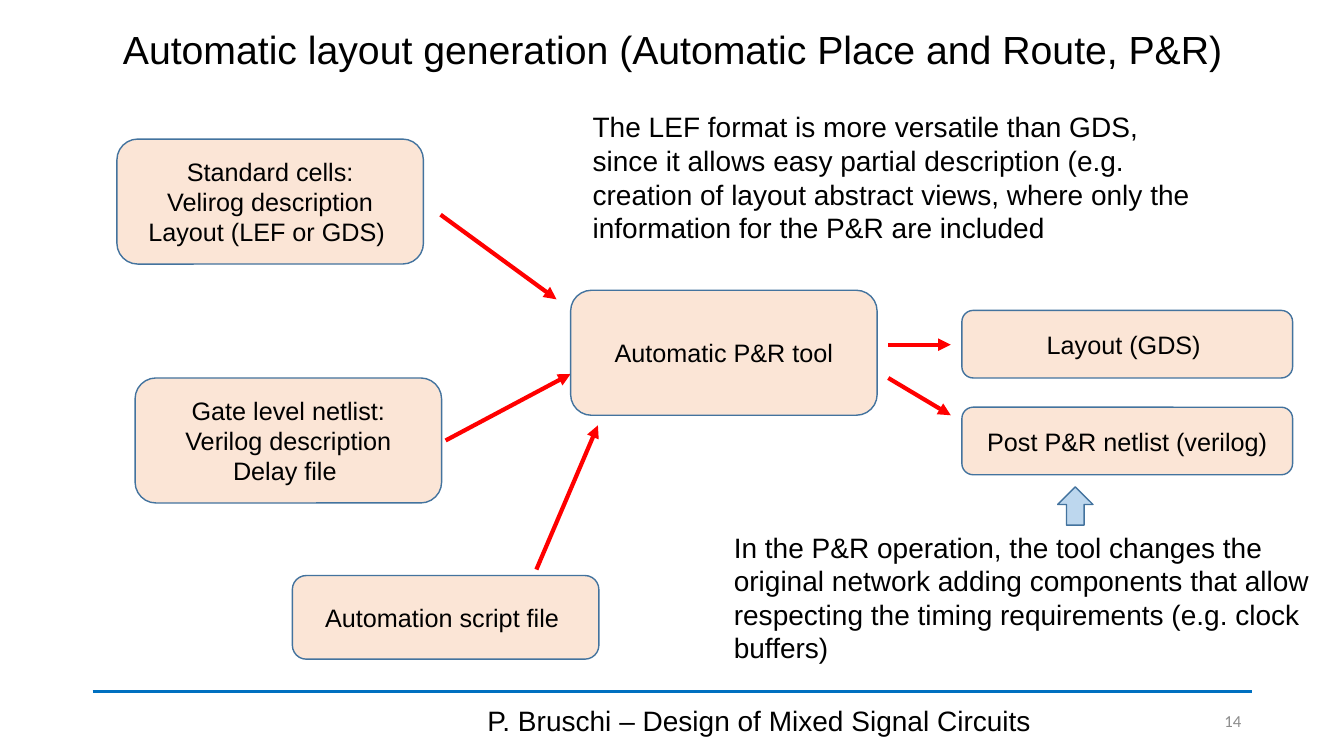
"""Build the slide on automatic place and route."""
from dataclasses import dataclass

from lxml import etree
from pptx import Presentation
from pptx import util as u
from pptx.dml import color
from pptx.enum import shapes, text
from pptx.oxml import ns

BLACK, PEACH, STEEL, SKY = "000000", "FBE5D6", "43739E", "BDD7EE"
RED, BLUE, GREY = "FF0000", "0070C0", "8C8C8C"
LEFT, CENTER, RIGHT = text.PP_ALIGN.LEFT, text.PP_ALIGN.CENTER, text.PP_ALIGN.RIGHT
TOP, MIDDLE = text.MSO_ANCHOR.TOP, text.MSO_ANCHOR.MIDDLE
BOX_WIDTH, TALL = 3.04, 1.24
OUTPUT_LEFT, OUTPUT_WIDTH, OUTPUT_HEIGHT = 9.54, 3.28, 0.67
NOTE_WIDTH, NOTE_HEIGHT = 6.16, 1.45


@dataclass
class Block:
    left: float
    top: float
    width: float
    height: float
    lines: tuple[str, ...] = ()
    fill: str = PEACH
    kind: int = shapes.MSO_SHAPE.ROUNDED_RECTANGLE


@dataclass
class Label:
    left: float
    top: float
    width: float
    height: float
    words: str
    size: int = 20
    align: int = LEFT
    anchor: int = MIDDLE
    font: str = "Arial"
    ink: str = BLACK
    spacing: float = 1.0


@dataclass
class Line:
    start: tuple[float, float]
    end: tuple[float, float]
    ink: str = RED
    weight: float = 3
    arrow: bool = True


BLOCKS = [
    Block(1.16, 1.38, BOX_WIDTH, TALL,
          ("Standard cells:", "Velirog description", "Layout (LEF or GDS) ")),
    Block(1.34, 3.75, BOX_WIDTH, TALL,
          ("Gate level netlist:", "Verilog description", "Delay file ")),
    Block(5.66, 2.88, BOX_WIDTH, TALL, ("Automatic P&R tool",)),
    Block(2.9, 5.71, BOX_WIDTH, 0.83, ("Automation script file ",)),
    Block(OUTPUT_LEFT, 3.08, OUTPUT_WIDTH, OUTPUT_HEIGHT, ("Layout (GDS) ",)),
    Block(OUTPUT_LEFT, 4.04, OUTPUT_WIDTH, OUTPUT_HEIGHT, ("Post P&R netlist (verilog)",)),
    Block(10.49, 4.83, 0.35, 0.38, fill=SKY, kind=shapes.MSO_SHAPE.UP_ARROW),
]
LABELS = [
    Label(0.92, 0.15, 11.5, 0.72,
          "Automatic layout generation (Automatic Place and Route, P&R)",
          size=28, align=CENTER, spacing=0.9),
    Label(4.42, 6.95, 6.22, 0.4, "P. Bruschi – Design of Mixed Signal Circuits", align=CENTER),
    Label(11.45, 6.95, 0.96, 0.4, "14", size=12, align=RIGHT, font="Calibri", ink=GREY),
    Label(7.18, 5.21, NOTE_WIDTH, NOTE_HEIGHT,
          "In the P&R operation, the tool changes the original network adding components "
          "that allow respecting the timing requirements (e.g. clock buffers)", anchor=TOP),
    Label(5.78, 1.04, NOTE_WIDTH, NOTE_HEIGHT,
          "The LEF format is more versatile than GDS, since it allows easy partial description "
          "(e.g. creation of layout abstract views, where only the information for the P&R "
          "are included", anchor=TOP),
]
LINES = [
    Line((0.92, 6.86), (12.42, 6.86), BLUE, 2.75, arrow=False),
    Line((4.37, 2.13), (5.52, 2.97)),
    Line((4.42, 4.37), (5.66, 3.71)),
    Line((5.32, 5.65), (5.93, 4.22)),
    Line((8.81, 3.42), (9.43, 3.42)),
    Line((8.81, 3.75), (9.43, 4.12)),
]


def apply(target, values: dict) -> None:
    """Set every named attribute on the target."""
    for name, value in values.items():
        setattr(target, name, value)


def paint(fill, ink: str) -> None:
    """Give a fill one solid colour."""
    fill.solid()
    fill.fore_color.rgb = color.RGBColor.from_string(ink)


def write(frame, lines: tuple[str, ...], label: Label) -> None:
    """Write one paragraph per line in the label's format."""
    apply(frame, {"word_wrap": True, "vertical_anchor": label.anchor})
    for index, words in enumerate(lines):
        para = frame.add_paragraph() if index else frame.paragraphs[0]
        apply(para, {"alignment": label.align, "line_spacing": label.spacing})
        span = para.add_run()
        span.text = words
        apply(span.font, {"name": label.font, "size": u.Pt(label.size)})
        paint(span.font.fill, label.ink)


def place(item: Block | Label) -> list[u.Length]:
    """Return left, top, width and height as lengths."""
    return [u.Inches(n) for n in (item.left, item.top, item.width, item.height)]


def draw_block(page, block: Block) -> None:
    """Draw a filled shape with its centred lines."""
    box = page.shapes.add_shape(block.kind, *place(block))
    box.shadow.inherit = False
    paint(box.fill, block.fill)
    paint(box.line.fill, STEEL)
    box.line.width = u.Pt(1)
    write(box.text_frame, block.lines, Label(0, 0, 0, 0, "", size=18, align=CENTER))


def draw_label(page, label: Label) -> None:
    """Draw a free text box."""
    box = page.shapes.add_textbox(*place(label))
    write(box.text_frame, (label.words,), label)


def draw_line(page, line: Line) -> None:
    """Draw a straight line, with an arrowhead if wanted."""
    ends = [u.Inches(n) for n in line.start + line.end]
    connector = page.shapes.add_connector(shapes.MSO_CONNECTOR.STRAIGHT, *ends)
    paint(connector.line.fill, line.ink)
    connector.line.width = u.Pt(line.weight)
    properties = connector._element.spPr
    if line.arrow:
        outline = properties.find(ns.qn("a:ln"))
        etree.SubElement(outline, ns.qn("a:tailEnd"), type="triangle")
    etree.SubElement(properties, ns.qn("a:effectLst"))


def main() -> None:
    """Build and save the deck."""
    deck = Presentation()
    apply(deck, {"slide_width": u.Inches(13.33), "slide_height": u.Inches(7.5)})
    page = deck.slides.add_slide(deck.slide_layouts[6])
    for items, draw in ((LINES, draw_line), (BLOCKS, draw_block), (LABELS, draw_label)):
        for item in items:
            draw(page, item)
    deck.save("out.pptx")


if __name__ == "__main__":
    main()
